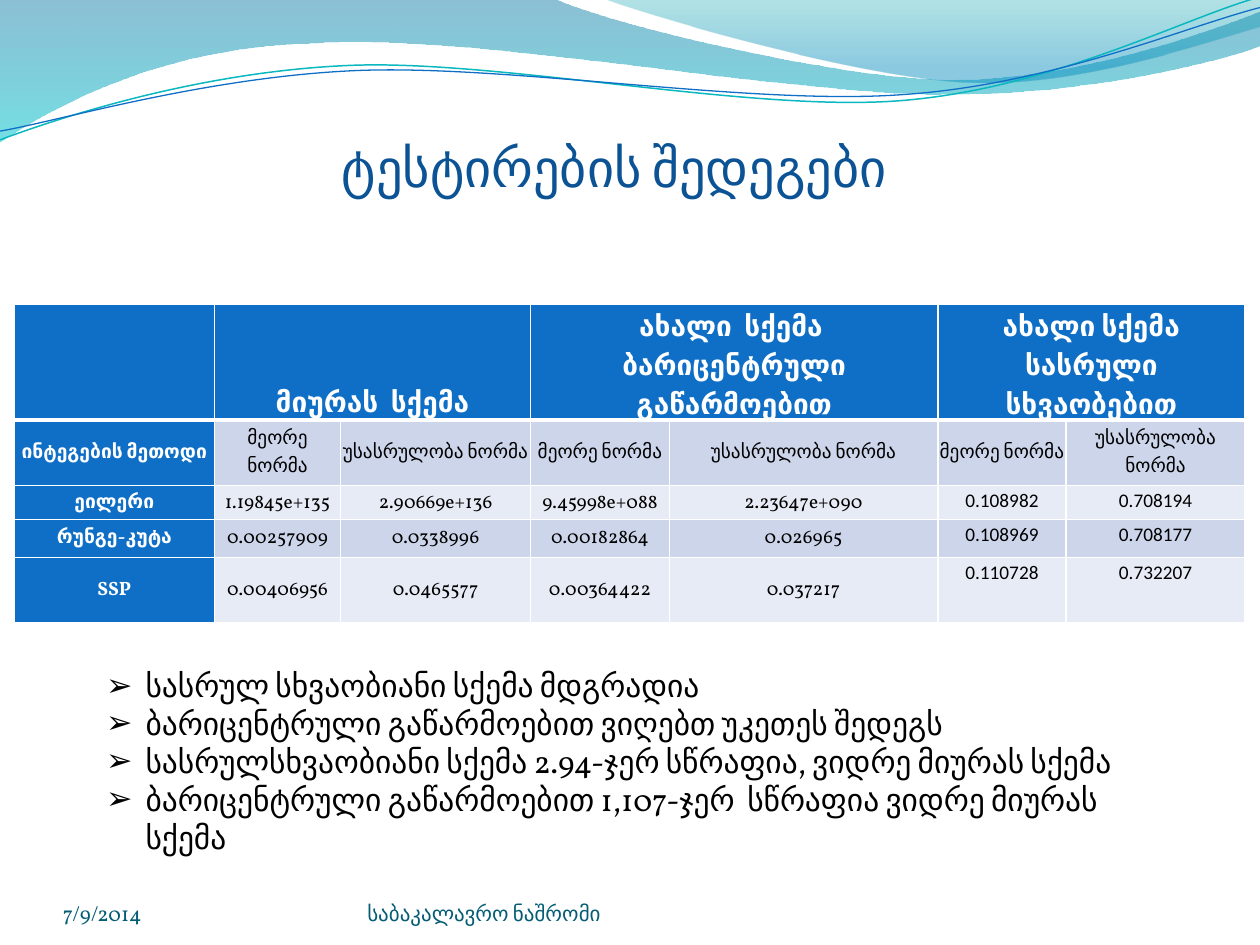
import math

from lxml import etree
from pptx import Presentation
from pptx.dml.color import RGBColor
from pptx.enum import text
from pptx.oxml import ns
from pptx.util import Pt

WHITE = RGBColor(0xFF, 0xFF, 0xFF)
BLACK = RGBColor(0x00, 0x00, 0x00)
BLUE = RGBColor(0x0F, 0x6F, 0xC6)
TITLE_BLUE = RGBColor(0x0B, 0x53, 0x94)
FOOTER_TEAL = RGBColor(0x04, 0x5D, 0x75)
LINE_TEAL = RGBColor(0x0A, 0xB8, 0xBF)
DEEP_BLUE = RGBColor(0x00, 0x74, 0xA1)
CYAN = RGBColor(0x00, 0xC6, 0xCF)
SEA_GREEN = RGBColor(0x00, 0xA1, 0xA9)
SKY = RGBColor(0x00, 0x8B, 0xBF)
BAND_DARK = RGBColor(0xCC, 0xD5, 0xEA)
BAND_LIGHT = RGBColor(0xE7, 0xEB, 0xF5)

SERIF = "Vollkorn"
SANS = "Calibri"
CENTER = text.PP_ALIGN.CENTER
MIDDLE = text.MSO_ANCHOR.MIDDLE
BOTTOM = text.MSO_ANCHOR.BOTTOM
TOP = text.MSO_ANCHOR.TOP
TILT = -2.7

BACK_WAVE = [
    (0, 0), (316.8, -0.7),
    (342.7, 12.2, 478.1, 45.4, 545.8, 45.4),
    (614.2, 45.4, 689.8, 18.7, 720, 6.5),
    (720.7, 25.9),
    (707.8, 31.7, 626.4, 54.7, 537.1, 54),
    (447.8, 54, 275, 20.2, 185, 24.5),
    (92.9, 25.9, 33.1, 59.8, -0.7, 81.4),
    (0, 0),
]
FRONT_WAVE = [
    (344.9, -0.7),
    (366.5, 7.9, 491, 44.6, 553.7, 46.8),
    (616.3, 49.7, 691.9, 23, 720, 15.1),
    (720, 0),
    (344.9, -0.7),
]
TEAL_LINE = [
    (0, 79.9),
    (34.6, 67, 113.8, 41, 199.4, 37.4),
    (284.4, 33.8, 427, 64.1, 513.4, 57.6),
    (599.8, 51.1, 675.4, 10.8, 718.6, -1.4),
]
BLUE_LINE = [
    (0, 74.9),
    (33.8, 69.1, 118.1, 43.9, 203.8, 40.3),
    (290.2, 36.7, 429.8, 60.5, 516.2, 54),
    (601.9, 48.2, 677.5, 15.1, 720, 4.3),
]

COLUMN_WIDTHS = [114.5, 72, 108.7, 79.2, 153.4, 73.4, 102.2]
ROW_HEIGHTS = [30.2, 37.4, 19.4, 21.6, 37.4]
SCHEMES = ["მიურას  სქემა", "ახალი  სქემა  ბარიცენტრული გაწარმოებით",
           "ახალი სქემა სასრული სხვაობებით"]
RESULTS = [
    ["ინტეგების მეთოდი"] + ["მეორე ნორმა", "უსასრულობა ნორმა"] * len(SCHEMES),
    ["ეილერი", "1.19845e+135", "2.90669e+136", "9.45998e+088", "2.23647e+090",
     "0.108982", "0.708194"],
    ["რუნგე-კუტა", "0.00257909", "0.0338996", "0.00182864", "0.026965",
     "0.108969", "0.708177"],
    ["SSP", "0.00406956", "0.0465577", "0.00364422", "0.037217",
     "0.110728", "0.732207"],
]
CONCLUSIONS = [
    "სასრულ სხვაობიანი სქემა მდგრადია",
    "ბარიცენტრული გაწარმოებით ვიღებთ უკეთეს შედეგს",
    "სასრულსხვაობიანი სქემა 2.94-ჯერ სწრაფია, ვიდრე მიურას სქემა",
    "ბარიცენტრული გაწარმოებით 1,107-ჯერ  სწრაფია ვიდრე მიურას სქემა",
]


def to_points(segment, tilt):
    cos, sin = math.cos(math.radians(tilt)), math.sin(math.radians(tilt))
    center_x, center_y = 359.3, 41.6
    points = []
    for x, y in zip(segment[::2], segment[1::2]):
        dx, dy = x - center_x, y - center_y
        points.append((Pt(center_x + dx * cos + dy * sin),
                       Pt(center_y - dx * sin + dy * cos)))
    return points


def add_curve(page, segments, close, tilt=0):
    parts = [to_points(segment, tilt) for segment in segments]
    anchors = [part[-1] for part in parts]
    builder = page.shapes.build_freeform(*anchors[0])
    builder.add_line_segments(anchors[1:], close=close)
    shape = builder.convert_to_shape()
    lines = list(shape.element.spPr.iter(ns.qn("a:lnTo")))
    for line, part in zip(lines, parts[1:]):
        if len(part) == 3:
            curve = etree.Element(ns.qn("a:cubicBezTo"))
            for x, y in part:
                etree.SubElement(curve, ns.qn("a:pt"),
                                 x=str(x - shape.left), y=str(y - shape.top))
            line.getparent().replace(line, curve)
    shape.rotation = tilt
    shape.shadow.inherit = False
    return shape


def add_wave(page, segments, stops):
    shape = add_curve(page, segments, True)
    shape.line.fill.background()
    shape.fill.gradient()
    shape.fill.gradient_angle = 270
    for stop, (position, color, _) in zip(shape.fill.gradient_stops, stops):
        stop.position = position
        stop.color.rgb = color
    for color, (_, _, opacity) in zip(shape.element.spPr.iter(ns.qn("a:srgbClr")), stops):
        etree.SubElement(color, ns.qn("a:alpha"), val=str(opacity * 1000))


def add_wave_line(page, segments, color, width):
    shape = add_curve(page, segments, False, TILT)
    shape.fill.background()
    shape.line.color.rgb = color
    shape.line.width = Pt(width)


def format_paragraph(para, size, color, name=SERIF, bold=False):
    para.font.size = Pt(size)
    para.font.color.rgb = color
    para.font.name = name
    para.font.bold = bold


def add_title(page, words):
    box = page.shapes.title
    box.left, box.top, box.width, box.height = Pt(90.4), Pt(73), Pt(521.3), Pt(43.9)
    box.text_frame.text = words
    box.text_frame.vertical_anchor = MIDDLE
    para = box.text_frame.paragraphs[0]
    para.alignment = CENTER
    format_paragraph(para, 30, TITLE_BLUE)


def add_footer(page, words, left, width):
    frame = page.shapes.add_textbox(Pt(left), Pt(500.4), Pt(width), Pt(28.8)).text_frame
    frame.margin_left = frame.margin_right = frame.margin_top = frame.margin_bottom = 0
    frame.word_wrap = True
    frame.vertical_anchor = BOTTOM
    frame.text = words
    format_paragraph(frame.paragraphs[0], 12, FOOTER_TEAL)


def set_borders(cell, top, bottom):
    properties = cell._tc.get_or_add_tcPr()
    for side, width in (("L", 1), ("R", 1), ("T", top), ("B", bottom)):
        line = etree.SubElement(properties, ns.qn("a:ln" + side), w=str(Pt(width)))
        fill = etree.SubElement(line, ns.qn("a:solidFill"))
        etree.SubElement(fill, ns.qn("a:srgbClr"), val=str(WHITE))


def fill_cell(cell, words, fill, anchor, tight, size, color, name, bold):
    cell.fill.solid()
    cell.fill.fore_color.rgb = fill
    cell.vertical_anchor = anchor
    cell.margin_left = cell.margin_right = Pt(0.7 if tight else 5)
    cell.margin_top = Pt(0.7 if tight else 0)
    cell.margin_bottom = 0
    cell.text = words
    para = cell.text_frame.paragraphs[0]
    para.alignment = CENTER
    if not tight:
        para.line_spacing = 1.15
    format_paragraph(para, size, color, name, bold)


def add_results_table(page):
    table = page.shapes.add_table(
        len(ROW_HEIGHTS), len(COLUMN_WIDTHS), Pt(8.1), Pt(173.9),
        Pt(sum(COLUMN_WIDTHS)), Pt(sum(ROW_HEIGHTS))).table
    table.horz_banding = False
    for column, width in zip(table.columns, COLUMN_WIDTHS):
        column.width = Pt(width)
    for index, (row, height) in enumerate(zip(table.rows, ROW_HEIGHTS)):
        row.height = Pt(height)
        for cell in row.cells:
            set_borders(cell, 3 if index == 1 else 1, 3 if index == 0 else 1)
    for column in range(len(COLUMN_WIDTHS)):
        words = SCHEMES[column // 2] if column % 2 else ""
        if column == 0 or column % 2:
            fill_cell(table.cell(0, column), words, BLUE, BOTTOM, False, 16, WHITE, SANS, True)
        if column % 2:
            table.cell(0, column).merge(table.cell(0, column + 1))
    for row, values in enumerate(RESULTS, 1):
        band = BAND_DARK if row % 2 else BAND_LIGHT
        for column, words in enumerate(values):
            heading = column == 0
            tight = row == 1 or column < 5
            fill_cell(table.cell(row, column), words, BLUE if heading else band,
                      MIDDLE if tight else TOP, tight, 11,
                      WHITE if heading else BLACK, SERIF if tight else SANS, heading)


def add_conclusions(page):
    box = page.shapes.add_textbox(Pt(53.6), Pt(377.3), Pt(629.3), Pt(94.3))
    frame = box.text_frame
    frame.word_wrap = True
    frame.auto_size = text.MSO_AUTO_SIZE.SHAPE_TO_FIT_TEXT
    frame.text = "\n".join(CONCLUSIONS)
    for para in frame.paragraphs:
        format_paragraph(para, 18, BLACK)
        properties = para._p.get_or_add_pPr()
        properties.set("marL", str(Pt(22.5)))
        properties.set("indent", str(-Pt(22.5)))
        properties.insert(0, etree.Element(ns.qn("a:buFont"), typeface=SANS))
        properties.insert(1, etree.Element(ns.qn("a:buChar"), char="➢"))


def main():
    deck = Presentation()
    deck.slide_width, deck.slide_height = Pt(720), Pt(540)
    page = deck.slides.add_slide(deck.slide_layouts[5])
    add_wave(page, BACK_WAVE, [(0, DEEP_BLUE, 45), (1, CYAN, 55)])
    add_wave(page, FRONT_WAVE, [(0, SEA_GREEN, 30), (0.8, SKY, 45)])
    add_wave_line(page, TEAL_LINE, LINE_TEAL, 0.85)
    add_wave_line(page, BLUE_LINE, BLUE, 0.75)
    add_footer(page, "7/9/2014", 36, 167.8)
    add_footer(page, "საბაკალავრო ნაშრომი", 209.9, 264.2)
    add_title(page, "ტესტირების შედეგები")
    add_results_table(page)
    add_conclusions(page)
    deck.save("out.pptx")


if __name__ == "__main__":
    main()
